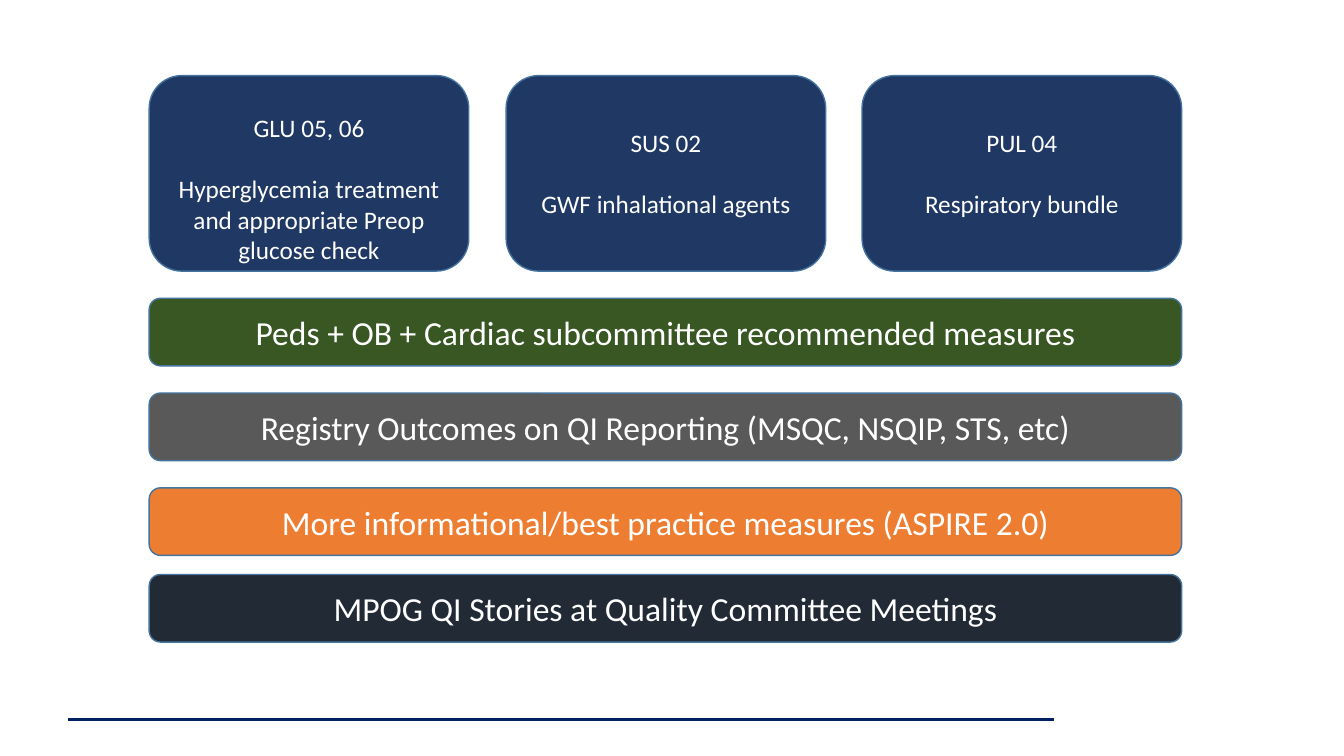
from collections import namedtuple

from lxml import etree
from pptx import Presentation
from pptx.dml.color import RGBColor as Rgb
from pptx.enum.shapes import MSO_CONNECTOR as Connector, MSO_SHAPE as Preset
from pptx.enum.text import MSO_ANCHOR as Anchor, PP_ALIGN as Align
from pptx.oxml.ns import qn
from pptx.util import Pt

PX = 9144  # one px is 1/100 inch
Box = namedtuple("Box", "left top width height")
Theme = namedtuple("Theme", "font text outline rule card card_size bar_size")
THEME = Theme("Calibri", "FFFFFF", "43739E", "002060", "203864", 18, 24)

PAGE = Box(0, 0, 1333, 750)
CARDS = Box(148, 75, 1024, 194)
CARD_WIDTH = 317
BAR_HEIGHT = 67
PARA_GAP = 22  # points, one line of card text

# Card lines and the extra inset above them
MEASURES = [
    (["GLU 05, 06", "Hyperglycemia treatment and appropriate Preop glucose check"], 30),
    (["SUS 02", "GWF inhalational agents"], 0),
    (["PUL 04", "Respiratory bundle"], 0),
]
# Bar offset below the top of the bar region, fill and label
INITIATIVES = [
    (0, "385723", "Peds + OB + Cardiac subcommittee recommended measures"),
    (94, "595959", "Registry Outcomes on QI Reporting (MSQC, NSQIP, STS, etc)"),
    (188, "ED7D31", "More informational/best practice measures (ASPIRE 2.0)"),
    (274, "222A35", "MPOG QI Stories at Quality Committee Meetings"),
]
BARS = Box(148, 296, 1024, 341)


def apply(target, values):
    for name, value in values.items():
        setattr(target, name, value)


def add_panel(page, box, fill, lines, size, extra_top=0):
    """Add one rounded panel with centred text."""
    panel = page.shapes.add_shape(Preset.ROUNDED_RECTANGLE, *(n * PX for n in box))
    panel.shadow.inherit = False
    panel.fill.solid()
    panel.fill.fore_color.rgb = Rgb.from_string(fill)
    panel.line.color.rgb = Rgb.from_string(THEME.outline)
    panel.line.width = Pt(1)
    frame = panel.text_frame
    apply(frame, {"word_wrap": True, "vertical_anchor": Anchor.MIDDLE,
                  "margin_top": (5 + extra_top) * PX, "margin_bottom": 5 * PX})
    for index, line in enumerate(lines):
        para = frame.add_paragraph() if index else frame.paragraphs[0]
        para.alignment = Align.CENTER
        if index:
            para.space_before = Pt(PARA_GAP)
        span = para.add_run()
        span.text = line
        apply(span.font, {"name": THEME.font, "size": Pt(size)})
        span.font.color.rgb = Rgb.from_string(THEME.text)


def add_cards(page, box):
    """Spread the measure cards evenly across the box."""
    step = (box.width - CARD_WIDTH) / (len(MEASURES) - 1)
    for index, (lines, extra_top) in enumerate(MEASURES):
        card = Box(box.left + round(index * step), box.top, CARD_WIDTH, box.height)
        add_panel(page, card, THEME.card, lines, THEME.card_size, extra_top)


def add_bars(page, box):
    """Stack the full-width initiative bars in the box."""
    for offset, fill, label in INITIATIVES:
        bar = Box(box.left, box.top + offset, box.width, BAR_HEIGHT)
        add_panel(page, bar, fill, [label], THEME.bar_size)


def add_footer_rule(page, box):
    """Draw the rule near the bottom of the page."""
    left, right, y = box.left + 67, box.left + 1045, box.top + 714
    ends = (n * PX for n in (left, y, right, y))
    rule = page.shapes.add_connector(Connector.STRAIGHT, *ends)
    rule.line.color.rgb = Rgb.from_string(THEME.rule)
    rule.line.width = Pt(2)
    etree.SubElement(rule._element.spPr, qn("a:effectLst"))


def main():
    deck = Presentation()
    apply(deck, {"slide_width": PAGE.width * PX, "slide_height": PAGE.height * PX})
    page = deck.slides.add_slide(deck.slide_layouts.get_by_name("Blank"))
    add_footer_rule(page, PAGE)
    add_cards(page, CARDS)
    add_bars(page, BARS)
    deck.save("out.pptx")


if __name__ == "__main__":
    main()
